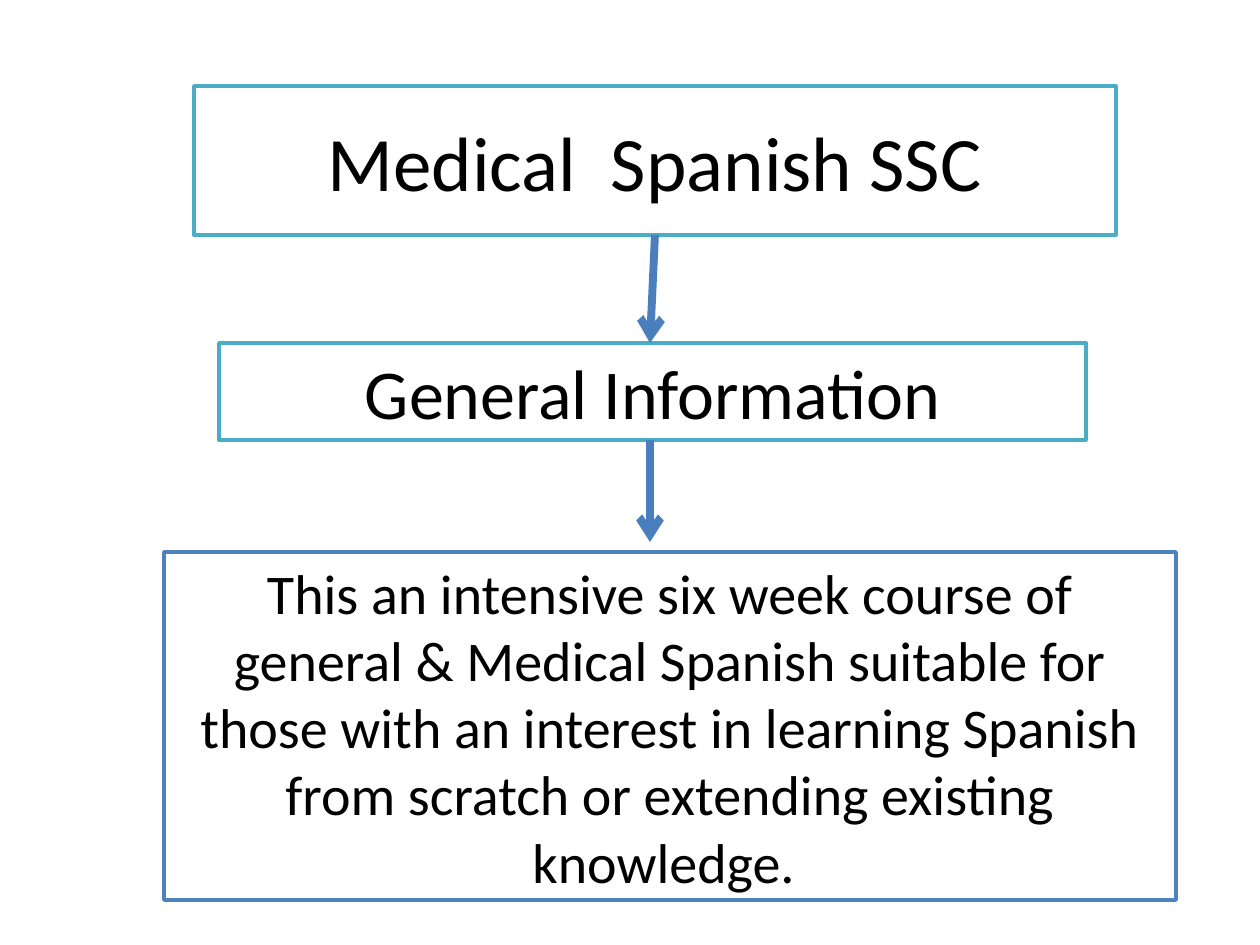
from lxml.etree import SubElement
from pptx import Presentation
from pptx.dml.color import RGBColor
from pptx.enum.shapes import MSO_CONNECTOR, MSO_SHAPE
from pptx.enum.text import MSO_ANCHOR as ANCHOR, PP_ALIGN as ALIGN
from pptx.oxml.ns import qn
from pptx.util import Emu, Pt


def px(length):
    return Emu(round(length * 914400 / 126))


def color(hex_value):
    return RGBColor.from_string(hex_value)


presentation = Presentation()
presentation.slide_width = px(1260)
presentation.slide_height = px(945)
slide = presentation.slides.add_slide(presentation.slide_layouts[6])

course_text = (
    "This an intensive six week course of general & Medical Spanish suitable "
    "for those with an interest in learning Spanish from scratch or extending "
    "existing knowledge. "
)
boxes = [
    ("Medical  Spanish SSC", (194, 86, 922, 149), "4BACC6", 44, ANCHOR.MIDDLE, 0),
    (course_text, (164, 552, 1012, 348), "4F81BD", 32, ANCHOR.TOP, 6.4),
    ("General Information", (219, 343, 867, 97), "4BACC6", 40, ANCHOR.TOP, 0),
]
for text, bounds, line_color, size, anchor, space_before in boxes:
    box = slide.shapes.add_shape(MSO_SHAPE.RECTANGLE, *map(px, bounds))
    box.shadow.inherit = False
    box.fill.solid()
    box.fill.fore_color.rgb = color("FFFFFF")
    box.line.color.rgb = color(line_color)
    box.line.width = Pt(2)
    text_frame = box.text_frame
    text_frame.word_wrap = True
    text_frame.vertical_anchor = anchor
    text_frame.text = text
    paragraph = text_frame.paragraphs[0]
    paragraph.alignment = ALIGN.CENTER
    paragraph.space_before = Pt(space_before)
    font = paragraph.runs[0].font
    font.name = "Calibri"
    font.size = Pt(size)
    font.color.rgb = color("000000")

arrows = [(655, 235, 650, 343), (650, 440, 650, 542)]
for ends in arrows:
    arrow = slide.shapes.add_connector(MSO_CONNECTOR.STRAIGHT, *map(px, ends))
    arrow.line.color.rgb = color("4B7EBC")
    arrow.line.width = Pt(4.5)
    properties = arrow.element.spPr
    SubElement(properties.find(qn("a:ln")), qn("a:tailEnd"), type="arrow")
    SubElement(properties, qn("a:effectLst"))

presentation.save("out.pptx")
